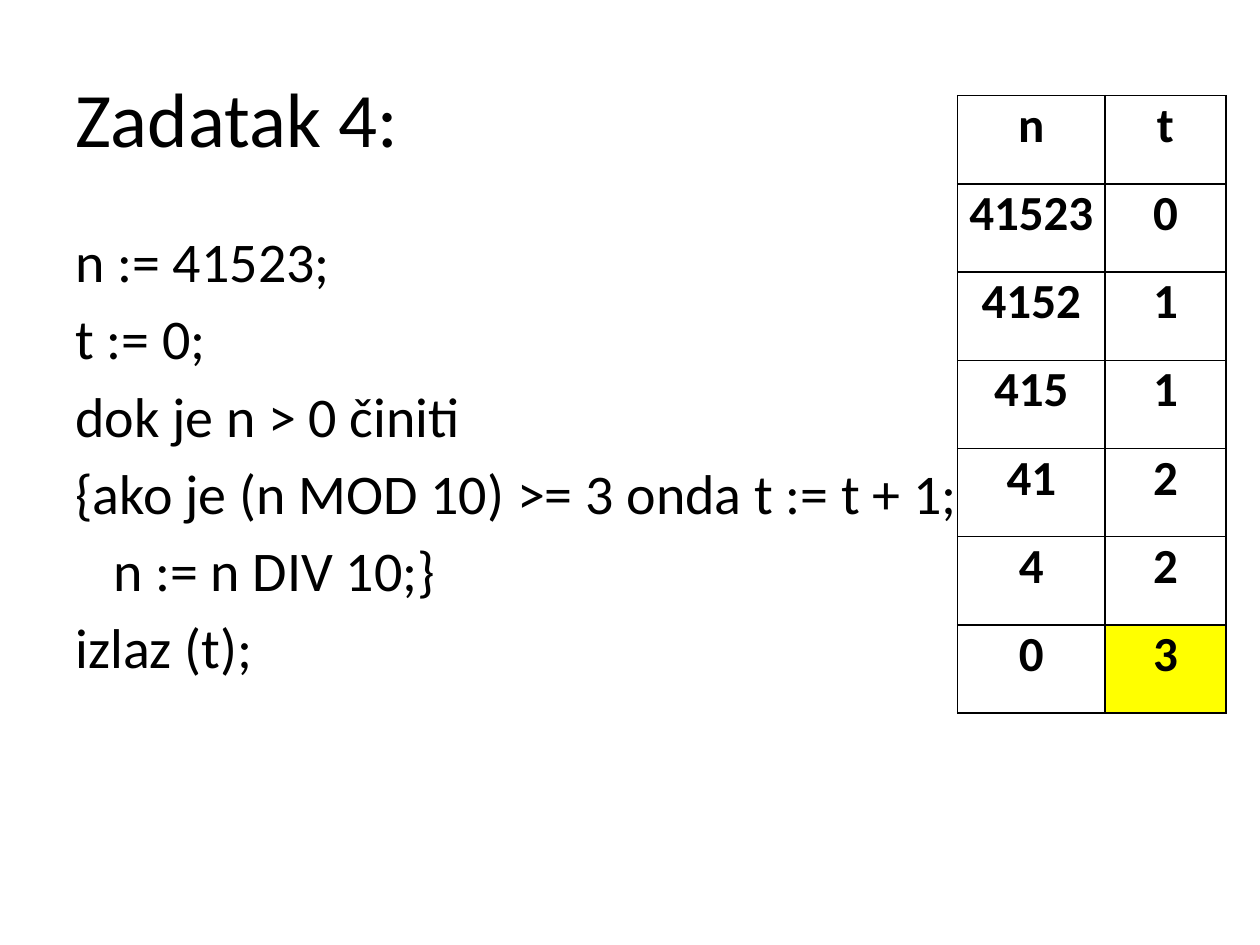
from lxml.etree import SubElement
from pptx import Presentation
from pptx.dml.color import RGBColor
from pptx.enum.text import MSO_ANCHOR as Anchor, PP_ALIGN as Align
from pptx.oxml.ns import qn
from pptx.util import Inches, Pt

TITLE = "Zadatak 4:"
# Each line of the algorithm with its indent in inches
ALGORITHM = [
    ("n := 41523;", 0),
    ("t := 0;", 0),
    ("dok je n > 0 činiti", 0),
    ("{ako je (n MOD 10) >= 3 onda t := t + 1;", 0),
    ("n := n DIV 10;}", 0.3),
    ("izlaz (t);", 0),
]
TRACE = [
    ("n", "t"),
    ("41523", "0"),
    ("4152", "1"),
    ("415", "1"),
    ("41", "2"),
    ("4", "2"),
    ("0", "3"),
]
RESULT_CELL = (len(TRACE) - 1, 1)

THEME = {
    "text": "000000",
    "border": "000000",
    "highlight": "FFFF00",
    "border_width": 1,
    "title": {"name": "Calibri", "size": Pt(44)},
    "body": {"name": "Calibri", "size": Pt(32)},
    "table": {"name": "Calibri", "size": Pt(28), "bold": True},
}
LINE_GAP = Pt(5.7)
TABLE_LEFT, TABLE_TOP = 7.6, 0.76
COLUMN_WIDTHS = (1.17, 0.96)
ROW_HEIGHT = 0.7
CELL_FORMAT = {
    "margin_left": Inches(0.07),
    "margin_right": Inches(0.07),
    "margin_top": 0,
    "margin_bottom": 0,
    "vertical_anchor": Anchor.TOP,
}


def write(paragraph, text, style):
    run = paragraph.add_run()
    run.text = text
    for name, value in THEME[style].items():
        setattr(run.font, name, value)
    run.font.color.rgb = RGBColor.from_string(THEME["text"])


def add_text_frame(slide, left, top, width, height, anchor):
    shape = slide.shapes.add_textbox(*map(Inches, (left, top, width, height)))
    frame = shape.text_frame
    frame.word_wrap = True
    frame.vertical_anchor = anchor
    return frame


def add_algorithm(slide):
    frame = add_text_frame(slide, 0.5, 1.75, 9, 4.95, Anchor.TOP)
    for index, (text, indent) in enumerate(ALGORITHM):
        paragraph = frame.add_paragraph() if index else frame.paragraphs[0]
        paragraph.space_before = LINE_GAP
        if indent:
            paragraph._p.get_or_add_pPr().set("marL", str(Inches(indent)))
        write(paragraph, text, "body")


def draw_borders(cell):
    """Put the four border lines ahead of the fill, as the schema orders them."""
    properties = cell._tc.get_or_add_tcPr()
    for position, side in enumerate(("lnL", "lnR", "lnT", "lnB")):
        line = SubElement(properties, qn(f"a:{side}"), w=str(Pt(THEME["border_width"])))
        fill = SubElement(line, qn("a:solidFill"))
        SubElement(fill, qn("a:srgbClr"), val=THEME["border"])
        properties.insert(position, line)


def add_trace_table(slide):
    table = slide.shapes.add_table(
        len(TRACE), len(COLUMN_WIDTHS),
        Inches(TABLE_LEFT), Inches(TABLE_TOP),
        Inches(sum(COLUMN_WIDTHS)), Inches(ROW_HEIGHT * len(TRACE)),
    ).table
    table.first_row = table.horz_banding = False
    for column, width in zip(table.columns, COLUMN_WIDTHS):
        column.width = Inches(width)
    for row_index, values in enumerate(TRACE):
        table.rows[row_index].height = Inches(ROW_HEIGHT)
        for column_index, value in enumerate(values):
            cell = table.cell(row_index, column_index)
            for name, setting in CELL_FORMAT.items():
                setattr(cell, name, setting)
            if (row_index, column_index) == RESULT_CELL:
                cell.fill.solid()
                cell.fill.fore_color.rgb = RGBColor.from_string(THEME["highlight"])
            else:
                cell.fill.background()
            draw_borders(cell)
            paragraph = cell.text_frame.paragraphs[0]
            paragraph.alignment = Align.CENTER
            write(paragraph, value, "table")


def main():
    presentation = Presentation()
    presentation.slide_width = Inches(10)
    presentation.slide_height = Inches(7.5)
    slide = presentation.slides.add_slide(presentation.slide_layouts[6])
    title = add_text_frame(slide, 0.5, 0.3, 9, 1.25, Anchor.MIDDLE)
    write(title.paragraphs[0], TITLE, "title")
    add_algorithm(slide)
    add_trace_table(slide)
    presentation.save("out.pptx")


if __name__ == "__main__":
    main()
